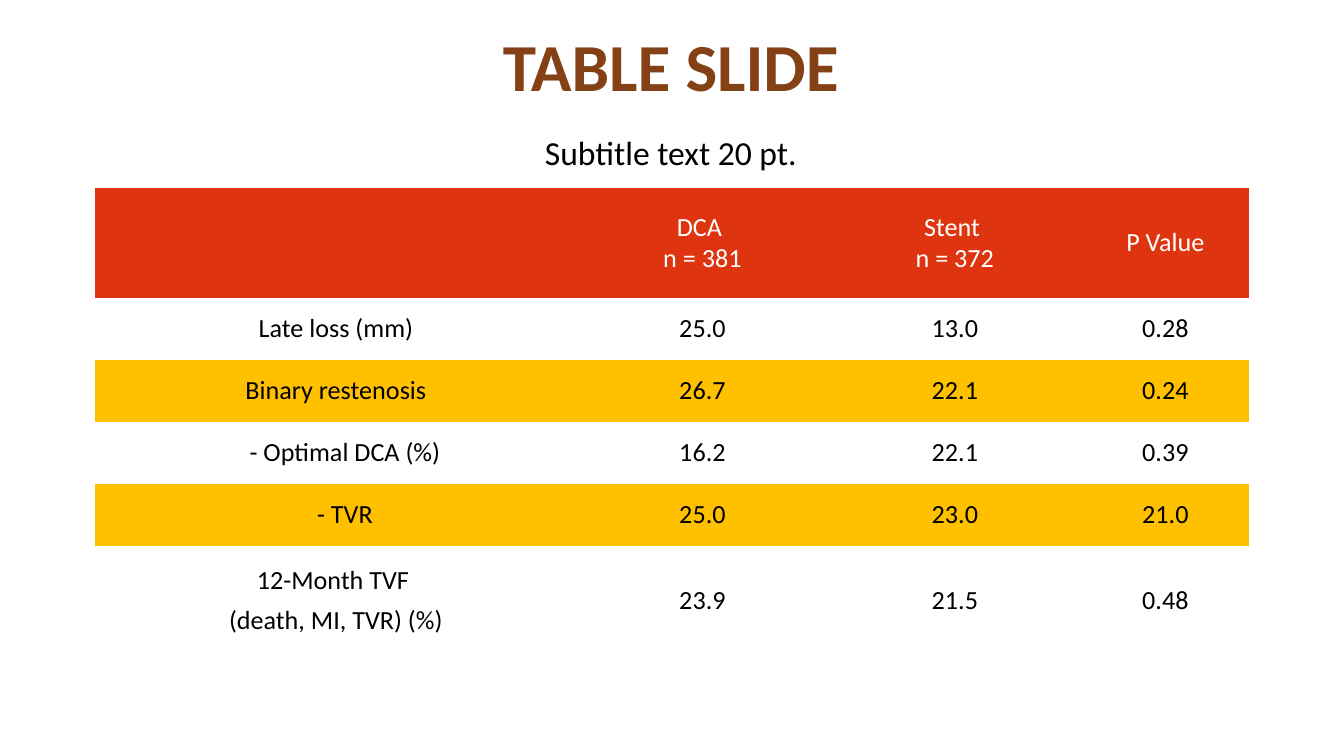
from dataclasses import dataclass

from pptx import Presentation
from pptx.dml.color import RGBColor
from pptx.enum.text import MSO_ANCHOR, PP_ALIGN
from pptx.oxml.ns import qn
from pptx.util import Emu, Pt

CENTER = PP_ALIGN.CENTER
TOP, MIDDLE = MSO_ANCHOR.TOP, MSO_ANCHOR.MIDDLE
EMU_PER_PX = 914400 / 134.4
NO_STYLE_NO_GRID = "{2D5ABB26-0587-4C30-8999-92F81FD0307C}"


@dataclass(frozen=True)
class Theme:
    font: str = "Calibri"
    title: RGBColor = RGBColor(0x83, 0x41, 0x15)
    text: RGBColor = RGBColor(0x00, 0x00, 0x00)
    header_text: RGBColor = RGBColor(0xFF, 0xFF, 0xFF)
    header_fill: RGBColor = RGBColor(0xDE, 0x35, 0x10)
    band_fill: RGBColor = RGBColor(0xFF, 0xC0, 0x00)
    title_size: int = 36
    subtitle_size: int = 18
    table_size: int = 14
    paragraph_gap: float = 4.2


THEME = Theme()

# Table content: one list of paragraphs per cell, "\n" is a line break
HEADER = [[], ["DCA \nn = 381"], ["Stent \nn = 372"], ["P Value"]]
ROWS = [
    [["Late loss (mm)"], ["25.0"], ["13.0"], ["0.28"]],
    [["Binary restenosis"], ["26.7"], ["22.1"], ["0.24"]],
    [["- Optimal DCA (%)"], ["16.2"], ["22.1"], ["0.39"]],
    [["- TVR"], ["25.0"], ["23.0"], ["21.0"]],
    [["12-Month TVF ", "(death, MI, TVR) (%)"], ["23.9"], ["21.5"], ["0.48"]],
]
COLUMN_WIDTHS = [482, 251, 254, 167]
ROW_HEIGHTS = [110, 62, 62, 62, 62, 110]
CELL_MARGIN, SUBITEM_INDENT = 13, 18


def px(value):
    return Emu(round(value * EMU_PER_PX))


def write_paragraph(paragraph, text, size, color, bold=False):
    paragraph.alignment = CENTER
    for index, line in enumerate(text.split("\n")):
        if index:
            paragraph.add_line_break()
        run = paragraph.add_run()
        run.text = line
        run.font.name = THEME.font
        run.font.size = Pt(size)
        run.font.bold = bold
        run.font.color.rgb = color


def add_heading(slide, box, text, size, color, anchor, bold=False):
    shape = slide.shapes.add_textbox(*map(px, box))
    frame = shape.text_frame
    frame.word_wrap = True
    frame.vertical_anchor = anchor
    paragraph = frame.paragraphs[0]
    paragraph.line_spacing = 0.9
    write_paragraph(paragraph, text, size, color, bold)


def fill_cell(cell, paragraphs, color, fill):
    cell.vertical_anchor = MIDDLE
    is_subitem = bool(paragraphs) and paragraphs[0].startswith("- ")
    cell.margin_left = px(CELL_MARGIN + SUBITEM_INDENT * is_subitem)
    cell.margin_right = px(CELL_MARGIN)
    if fill is None:
        cell.fill.background()
    else:
        cell.fill.solid()
        cell.fill.fore_color.rgb = fill
    frame = cell.text_frame
    for index, text in enumerate(paragraphs):
        paragraph = frame.add_paragraph() if index else frame.paragraphs[0]
        if index:
            paragraph.space_before = Pt(THEME.paragraph_gap)
        write_paragraph(paragraph, text, THEME.table_size, color)


def add_results_table(slide, left, top):
    rows = [HEADER] + ROWS
    table = slide.shapes.add_table(
        len(rows), len(COLUMN_WIDTHS), px(left), px(top),
        px(sum(COLUMN_WIDTHS)), px(sum(ROW_HEIGHTS))).table
    table.first_row = table.horz_banding = False
    table._tbl.tblPr.find(qn("a:tableStyleId")).text = NO_STYLE_NO_GRID
    for column, width in zip(table.columns, COLUMN_WIDTHS):
        column.width = px(width)
    for row, height in zip(table.rows, ROW_HEIGHTS):
        row.height = px(height)

    # Header in red, then every second body row banded
    for row_index, (row, contents) in enumerate(zip(table.rows, rows)):
        color = THEME.text if row_index else THEME.header_text
        if row_index == 0:
            fill = THEME.header_fill
        else:
            fill = THEME.band_fill if row_index % 2 == 0 else None
        for cell, paragraphs in zip(row.cells, contents):
            fill_cell(cell, paragraphs, color, fill)


def main():
    presentation = Presentation()
    presentation.slide_width, presentation.slide_height = px(1344), px(756)
    slide = presentation.slides.add_slide(presentation.slide_layouts[6])

    # Headings
    add_heading(slide, (36, 20, 1270, 100), "TABLE SLIDE",
                THEME.title_size, THEME.title, MIDDLE, bold=True)
    add_heading(slide, (36, 130, 1270, 58), "Subtitle text 20 pt.",
                THEME.subtitle_size, THEME.text, TOP)

    # Results
    add_results_table(slide, 95, 188)
    presentation.save("out.pptx")


if __name__ == "__main__":
    main()
